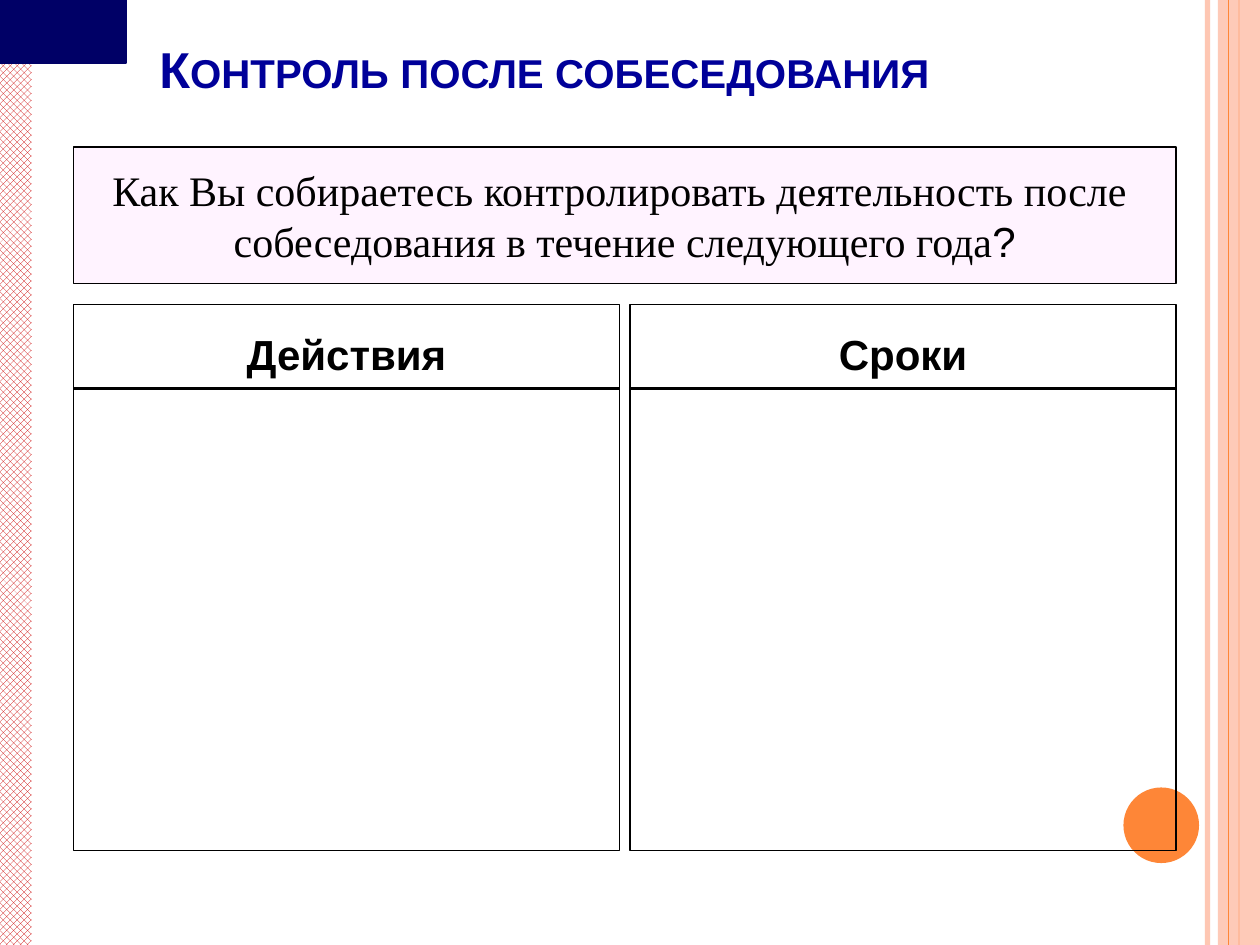
"""Build the slide about follow-up after an appraisal interview."""
from lxml.etree import SubElement
from pptx import Presentation
from pptx.dml.color import RGBColor
from pptx.enum.dml import MSO_PATTERN
from pptx.enum.shapes import MSO_CONNECTOR, MSO_SHAPE
from pptx.enum.text import MSO_ANCHOR, PP_ALIGN
from pptx.oxml.ns import qn
from pptx.util import Pt

PX = 7620
WIDTH, HEIGHT = 1200, 900
PANEL_TOP, PANEL_SIZE, RULE_Y = 290, 520, 370


def paint(fill, color, opacity=100):
    fill.solid()
    fill.fore_color.rgb = RGBColor.from_string(color)
    if opacity < 100:
        color_element = fill._xPr.find(qn("a:solidFill"))[0]
        SubElement(color_element, qn("a:alpha"), val=str(opacity * 1000))


def add_line(x1, y1, x2, y2, color, points, opacity=100):
    line = slide.shapes.add_connector(
        MSO_CONNECTOR.STRAIGHT, x1 * PX, y1 * PX, x2 * PX, y2 * PX)
    line.line.width = Pt(points)
    paint(line.line.fill, color, opacity)
    SubElement(line._element.spPr, qn("a:effectLst"))


presentation = Presentation()
presentation.slide_width = WIDTH * PX
presentation.slide_height = HEIGHT * PX
slide = presentation.slides.add_slide(presentation.slide_layouts[6])

add_line(1150, 0, 1150, HEIGHT, "FEC3AE", 3, 93)
add_line(1180, 0, 1180, HEIGHT, "FE8637", 1.5)

right_band = slide.shapes.add_shape(
    MSO_SHAPE.RECTANGLE, 1160 * PX, 0, 40 * PX, HEIGHT * PX)
paint(right_band.fill, "FEC3AE", 87)
add_line(1170, 0, 1170, HEIGHT, "FE8637", 0.75)

circle = slide.shapes.add_shape(
    MSO_SHAPE.OVAL, 1070 * PX, 750 * PX, 72 * PX, 72 * PX)
paint(circle.fill, "FE8637")

left_band = slide.shapes.add_shape(
    MSO_SHAPE.RECTANGLE, 0, 0, 30 * PX, HEIGHT * PX)
left_band.fill.patterned()
left_band.fill.pattern = MSO_PATTERN.LARGE_CHECKER_BOARD
left_band.fill.fore_color.rgb = RGBColor.from_string("CC0000")
left_band.fill.back_color.rgb = RGBColor.from_string("FFFFFF")

for shape in (right_band, circle, left_band):
    shape.line.fill.background()
    shape.shadow.inherit = False

title = slide.shapes.add_textbox(140 * PX, 40 * PX, 990 * PX, 60 * PX)
title.text_frame.word_wrap = True
title.text_frame.vertical_anchor = MSO_ANCHOR.BOTTOM
run = title.text_frame.paragraphs[0].add_run()
run.text = "Контроль после собеседования"
run.font.size = Pt(28.8)
run.font.name = "Arial"
run.font.bold = True
paint(run.font.fill, "000099")
run._r.get_or_add_rPr().set("cap", "small")

question = [
    [("Как Вы собираетесь контролировать деятельность после ", "Times New Roman")],
    [("собеседования в течение следующего года", "Times New Roman"), ("?", "Arial")],
]
boxes = [
    (0, 0, 120, 60, "000066", "000066", []),
    (70, 140, 1050, 130, "FFF3FF", "000000", question),
    (70, PANEL_TOP, PANEL_SIZE, PANEL_SIZE, None, "000000", [[("Действия", "Arial")]]),
    (600, PANEL_TOP, PANEL_SIZE, PANEL_SIZE, None, "000000", [[("Сроки", "Arial")]]),
]
for left, top, width, height, fill, border, lines in boxes:
    shape = slide.shapes.add_shape(
        MSO_SHAPE.RECTANGLE, left * PX, top * PX, width * PX, height * PX)
    shape.shadow.inherit = False
    shape.line.width = Pt(0.75)
    paint(shape.line.fill, border)
    if fill:
        paint(shape.fill, fill)
    else:
        shape.fill.background()
    is_panel = top == PANEL_TOP
    frame = shape.text_frame
    frame.word_wrap = False
    frame.vertical_anchor = MSO_ANCHOR.TOP if is_panel else MSO_ANCHOR.MIDDLE
    if is_panel:
        frame.margin_top = 23 * PX
    for index, runs in enumerate(lines):
        paragraph = frame.add_paragraph() if index else frame.paragraphs[0]
        paragraph.alignment = PP_ALIGN.CENTER
        for text, font_name in runs:
            run = paragraph.add_run()
            run.text = text
            run.font.size = Pt(24)
            run.font.name = font_name
            run.font.bold = is_panel
            paint(run.font.fill, "000000")

for left in (70, 600):
    add_line(left, RULE_Y, left + PANEL_SIZE, RULE_Y, "000000", 2.25)

presentation.save("out.pptx")
